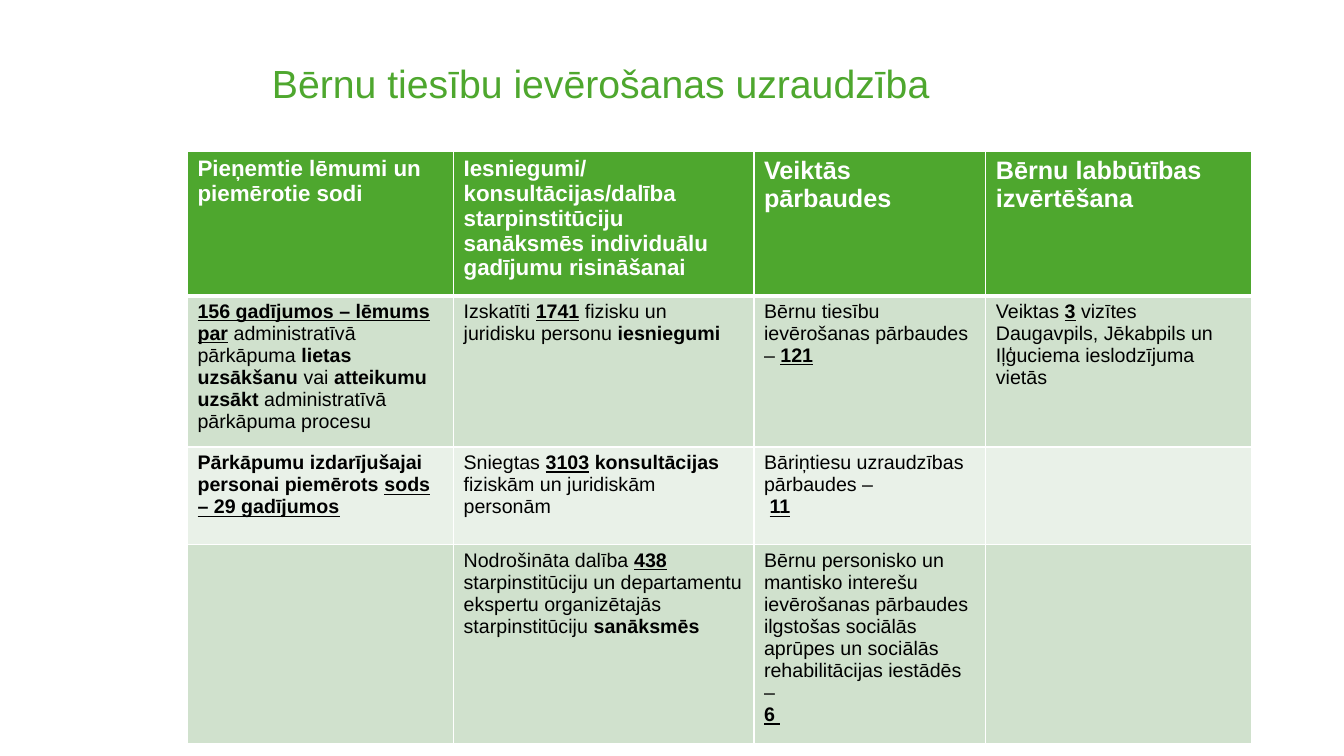
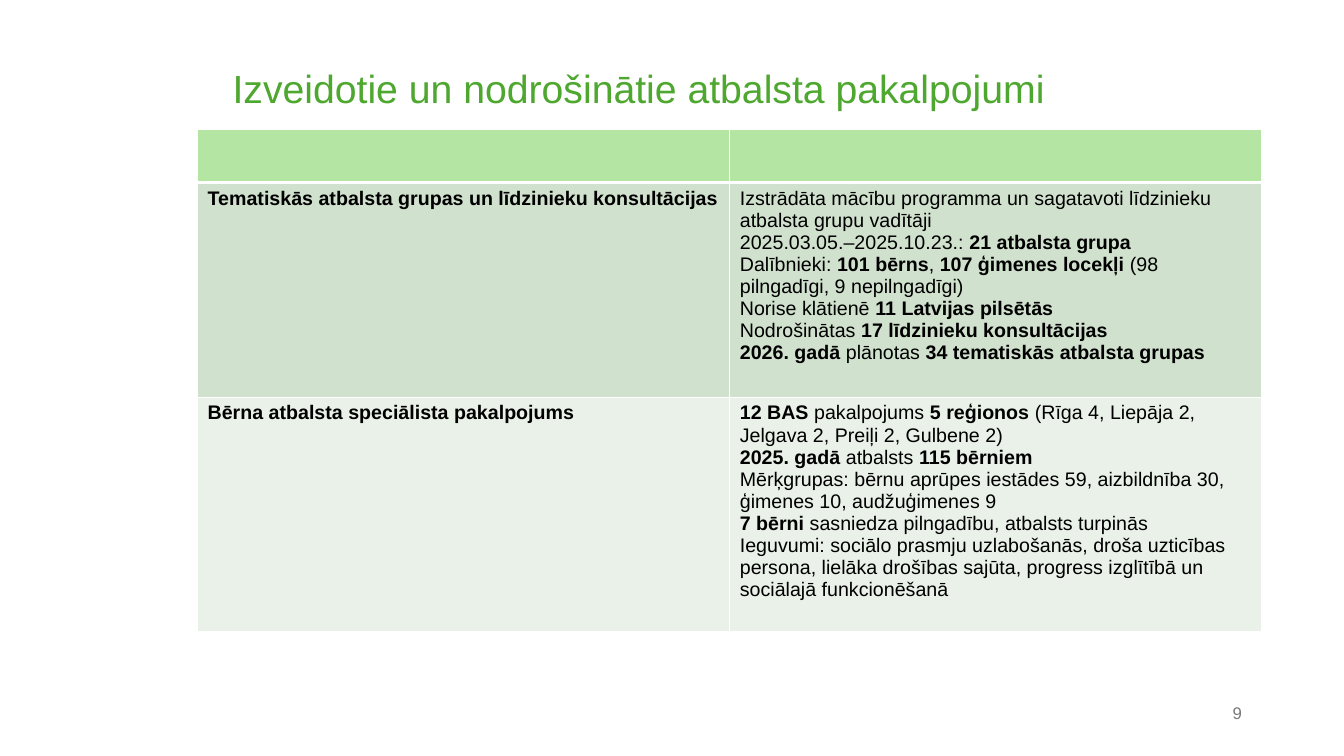
import dataclasses

import lxml.etree
import pptx
import pptx.dml.color
import pptx.enum.text
import pptx.oxml.ns
import pptx.util


@dataclasses.dataclass(frozen=True)
class Theme:
    """Colours, type sizes and grid shared by all slides."""

    font: str = "Arial"
    green: str = "4EA72E"
    light_green: str = "B4E5A2"
    bands: tuple = ("D0E1CD", "E9F1E8")
    white: str = "FFFFFF"
    black: str = "000000"
    grey: str = "797979"
    title_size: int = 28
    head_size: int = 16
    large_head_size: int = 18
    body_size: int = 14
    number_size: int = 12
    thin: int = 1
    thick: int = 3
    columns: float = 133.33
    rows: float = 75
    unit: float = 0.1


THEME = Theme()
NUMBER_BOX = (94.2, 68.7, 30, 4)
TABLE_WIDTH = 105.6

RIGHTS_HEAD = [
    ("Pieņemtie lēmumi un piemērotie sodi", THEME.head_size),
    ("Iesniegumi/konsultācijas/dalība starpinstitūciju sanāksmēs individuālu gadījumu risināšanai",
     THEME.head_size),
    ("Veiktās pārbaudes", THEME.large_head_size),
    ("Bērnu labbūtības izvērtēšana", THEME.large_head_size),
]
RIGHTS_BODY = [
    [
        ["_156 gadījumos – lēmums par_ administratīvā pārkāpuma *lietas uzsākšanu* vai "
         "*atteikumu uzsākt* administratīvā pārkāpuma procesu"],
        ["Izskatīti _1741_ fizisku un juridisku personu *iesniegumi*"],
        ["Bērnu tiesību ievērošanas pārbaudes – _121_"],
        ["Veiktas _3_ vizītes Daugavpils, Jēkabpils un Iļģuciema ieslodzījuma vietās"],
    ],
    [
        ["*Pārkāpumu izdarījušajai personai piemērots _sods – 29 gadījumos_*"],
        ["Sniegtas _3103_ *konsultācijas *fiziskām un juridiskām personām"],
        ["Bāriņtiesu uzraudzības pārbaudes –", " _11_"],
        [],
    ],
    [
        [],
        ["Nodrošināta dalība _438 _starpinstitūciju un departamentu ekspertu organizētajās "
         "starpinstitūciju *sanāksmēs*"],
        ["Bērnu personisko un mantisko interešu ievērošanas pārbaudes ilgstošas sociālās "
         "aprūpes un sociālās rehabilitācijas iestādēs –", "_6 _"],
        [],
    ],
]
SUPPORT_BODY = [
    [
        ["*Tematiskās atbalsta grupas un līdzinieku konsultācijas*"],
        [
            "Izstrādāta mācību programma un sagatavoti līdzinieku atbalsta grupu vadītāji",
            "2025.03.05.–2025.10.23.: *21 atbalsta grupa*",
            "Dalībnieki: *101 bērns*, *107 ģimenes locekļi* (98 pilngadīgi, 9 nepilngadīgi)",
            "Norise klātienē *11 Latvijas pilsētās*",
            "Nodrošinātas *17 līdzinieku konsultācijas*",
            "*2026. gadā* plānotas *34 tematiskās atbalsta grupas*",
        ],
    ],
    [
        ["*Bērna atbalsta speciālista pakalpojums*"],
        [
            "*12 BAS* pakalpojums *5 reģionos* (Rīga 4, Liepāja 2, Jelgava 2, Preiļi 2, Gulbene 2)",
            "*2025. gadā* atbalsts *115 bērniem*",
            "Mērķgrupas: bērnu aprūpes iestādes 59, aizbildnība 30, ģimenes 10, audžuģimenes 9",
            "*7 bērni* sasniedza pilngadību, atbalsts turpinās",
            "Ieguvumi: sociālo prasmju uzlabošanās, droša uzticības persona, lielāka drošības "
            "sajūta, progress izglītībā un sociālajā funkcionēšanā",
        ],
    ],
]


def grid(units):
    """Turn grid units into a length."""
    return pptx.util.Inches(units * THEME.unit)


def colour(code):
    """Turn a hex code into a colour."""
    return pptx.dml.color.RGBColor.from_string(code)


def write(frame, lines, size=THEME.body_size, ink=THEME.black, align=None, spacing=None):
    """Write lines into a text frame; *bold* and _bold underlined_ parts are marked."""
    for index, line in enumerate(lines):
        para = frame.paragraphs[0] if index == 0 else frame.add_paragraph()
        para.alignment = align
        para.line_spacing = spacing
        for outer, part in enumerate(line.split("*")):
            for inner, piece in enumerate(part.split("_")):
                if not piece:
                    continue
                span = para.add_run()
                span.text = piece
                span.font.name = THEME.font
                span.font.size = pptx.util.Pt(size)
                span.font.color.rgb = colour(ink)
                span.font.bold = bool(outer % 2 or inner % 2)
                span.font.underline = bool(inner % 2)


def add_text(page, box, text, **style):
    """Add a vertically centred line of text in a box of grid units."""
    frame = page.shapes.add_textbox(*map(grid, box)).text_frame
    frame.word_wrap = True
    frame.vertical_anchor = pptx.enum.text.MSO_ANCHOR.MIDDLE
    write(frame, [text], **style)


def add_borders(cell, top, bottom):
    """Give a cell white borders with the given top and bottom widths."""
    properties = cell._tc.get_or_add_tcPr()
    widths = {"a:lnL": THEME.thin, "a:lnR": THEME.thin, "a:lnT": top, "a:lnB": bottom}
    for place, (tag, width) in enumerate(widths.items()):
        line = lxml.etree.Element(pptx.oxml.ns.qn(tag), w=str(pptx.util.Pt(width)))
        fill = lxml.etree.SubElement(line, pptx.oxml.ns.qn("a:solidFill"))
        lxml.etree.SubElement(fill, pptx.oxml.ns.qn("a:srgbClr"), val=THEME.white)
        properties.insert(place, line)


def add_grid_table(page, corner, shares, heights, head, head_fill, body):
    """Add a table with a header row and banded body rows."""
    box = (*corner, TABLE_WIDTH, sum(heights))
    table = page.shapes.add_table(len(heights), len(shares), *map(grid, box)).table
    for column, share in zip(table.columns, shares):
        column.width = grid(TABLE_WIDTH * share / sum(shares))
    for row, height in zip(table.rows, heights):
        row.height = grid(height)
    for column, (text, size) in enumerate(head):
        write(table.cell(0, column).text_frame, [f"*{text}*"], size=size, ink=THEME.white)
    for row, entries in enumerate(body, start=1):
        for column, lines in enumerate(entries):
            write(table.cell(row, column).text_frame, lines)
    for row in range(len(heights)):
        fill = THEME.bands[(row - 1) % 2] if row else head_fill
        top = THEME.thick if row == 1 else THEME.thin
        bottom = THEME.thin if row else THEME.thick
        for column in range(len(shares)):
            cell = table.cell(row, column)
            cell.fill.solid()
            cell.fill.fore_color.rgb = colour(fill)
            add_borders(cell, top, bottom)


def add_page(deck, title, title_box, number, spacing=None):
    """Add a blank slide with its title and slide number."""
    page = deck.slides.add_slide(deck.slide_layouts[6])
    add_text(page, title_box, title, size=THEME.title_size, ink=THEME.green, spacing=spacing)
    add_text(page, NUMBER_BOX, number, size=THEME.number_size, ink=THEME.grey,
             align=pptx.enum.text.PP_ALIGN.RIGHT)
    return page


def add_rights_page(deck):
    """Build the slide on monitoring of children's rights."""
    page = add_page(deck, "Bērnu tiesību ievērošanas uzraudzība", (26, 5.4, 85.6, 5.7), "7")
    add_grid_table(page, (18.6, 15), (26.4, 29.8, 23, 26.4), (13.3, 14.2, 9.7, 18.5),
                   RIGHTS_HEAD, THEME.green, RIGHTS_BODY)


def add_support_page(deck):
    """Build the slide on support services."""
    page = add_page(deck, "Izveidotie un nodrošinātie atbalsta pakalpojumi",
                    (22.1, 4.2, 105.6, 9.7), "9", spacing=0.9)
    add_grid_table(page, (19.6, 12.8), (1, 1), (5.3, 21.3, 23.3),
                   [], THEME.light_green, SUPPORT_BODY)


def main():
    """Build and save the deck."""
    deck = pptx.Presentation()
    deck.slide_width = grid(THEME.columns)
    deck.slide_height = grid(THEME.rows)
    add_rights_page(deck)
    add_support_page(deck)
    deck.save("out.pptx")


if __name__ == "__main__":
    main()
